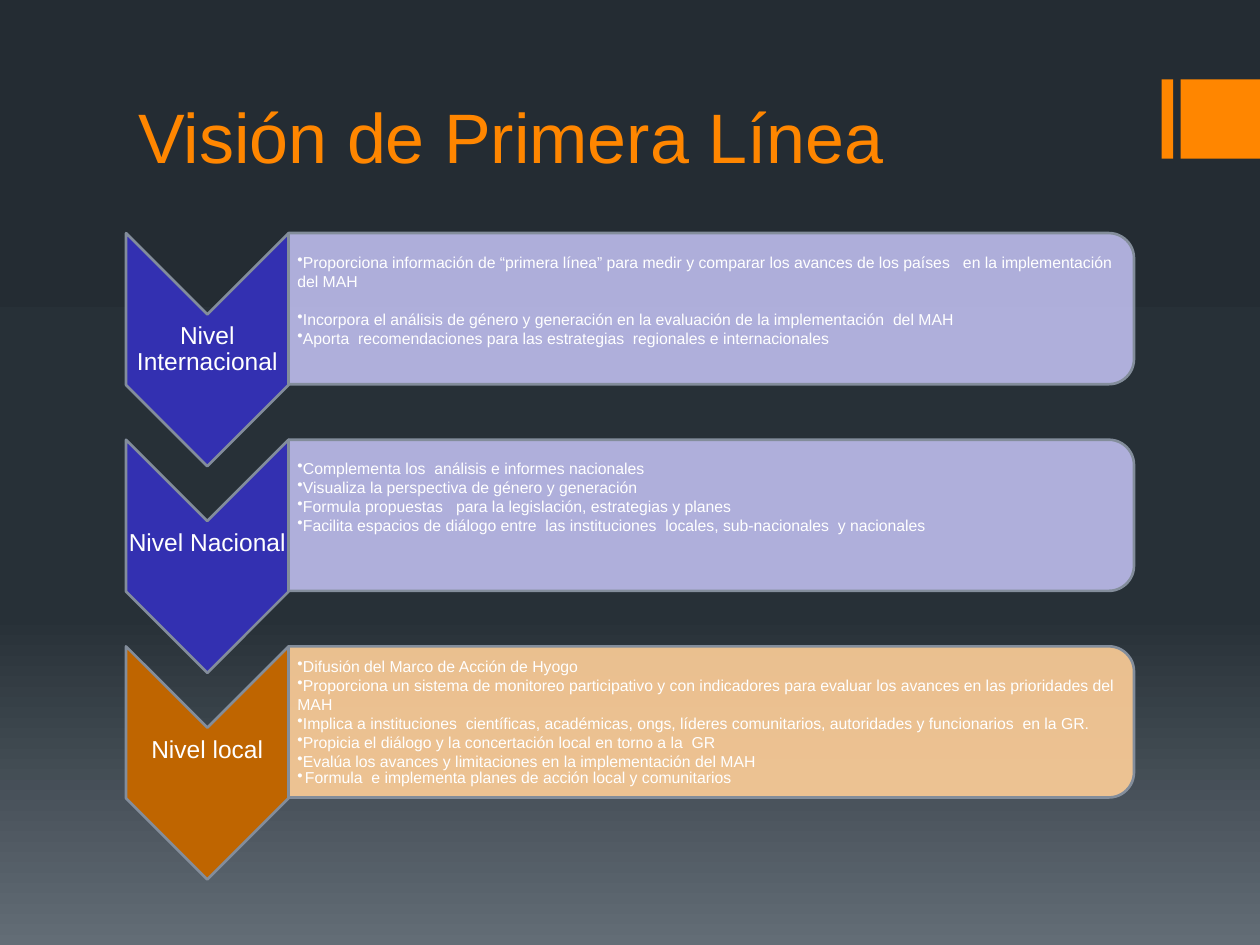
from copy import deepcopy

from lxml import etree
from pptx import Presentation
from pptx.dml.color import RGBColor
from pptx.enum.shapes import MSO_SHAPE
from pptx.enum.text import MSO_ANCHOR, PP_ALIGN
from pptx.oxml.ns import qn
from pptx.util import Inches, Pt

RECTANGLE = MSO_SHAPE.RECTANGLE
CHEVRON = MSO_SHAPE.CHEVRON
ROUNDED_TOP = MSO_SHAPE.ROUND_2_SAME_RECTANGLE
MIDDLE, BOTTOM = MSO_ANCHOR.MIDDLE, MSO_ANCHOR.BOTTOM
LEFT, CENTER = PP_ALIGN.LEFT, PP_ALIGN.CENTER

ORANGE, WHITE, OUTLINE = "FF8600", "FFFFFF", "838D9B"
BACKGROUND_STOPS = [(0, "242C33"), (0.65, "273037"), (1, "636D76")]
FIRST_TOP, ROW_PITCH = 1.85, 1.64
CHEVRON_WIDTH, CHEVRON_HEIGHT = 1.29, 1.85
PANEL_LEFT, PANEL_WIDTH, PANEL_HEIGHT = 2.29, 6.71, 1.2

LEVELS = [
    dict(
        label="Nivel Internacional", dark="3330B1", light="BEBDED",
        label_bottom=0.01, panel_bottom=0.15, gap_after_first=10.8,
        bullets=[
            "Proporciona información de “primera línea” para medir y comparar los avances de los países   en la implementación del MAH",
            "Incorpora el análisis de género y generación en la evaluación de la implementación  del MAH",
            "Aporta  recomendaciones para las estrategias  regionales e internacionales",
        ],
    ),
    dict(
        label="Nivel Nacional", dark="3330B1", light="BEBDED",
        label_bottom=0.21, panel_bottom=0.31,
        bullets=[
            "Complementa los  análisis e informes nacionales",
            "Visualiza la perspectiva de género y generación",
            "Formula propuestas   para la legislación, estrategias y planes",
            "Facilita espacios de diálogo entre  las instituciones  locales, sub-nacionales  y nacionales",
        ],
    ),
    dict(
        label="Nivel local", dark="BF6500", light="FFCF99",
        label_bottom=0.21, panel_bottom=0.01, last_hanging=0.06,
        bullets=[
            "Difusión del Marco de Acción de Hyogo",
            "Proporciona un sistema de monitoreo participativo y con indicadores para evaluar los avances en las prioridades del MAH",
            "Implica a instituciones  científicas, académicas, ongs, líderes comunitarios, autoridades y funcionarios  en la GR.",
            "Propicia el diálogo y la concertación local en torno a la  GR",
            "Evalúa los avances y limitaciones en la implementación del MAH",
            "Formula  e implementa planes de acción local y comunitarios",
        ],
    ),
]


def color(value):
    """Turn a hex string into a colour."""
    return RGBColor.from_string(value)


def set_background(slide):
    """Fill the slide with a gradient running from top to bottom."""
    fill = slide.background.fill
    fill.gradient()
    fill.gradient_angle = 270
    stop_list = slide.element.find(".//" + qn("a:gsLst"))
    stop_list.append(deepcopy(stop_list[-1]))
    for stop, (position, value) in zip(fill.gradient_stops, BACKGROUND_STOPS):
        stop.position = position
        stop.color.rgb = color(value)


def add_box(slide, kind, left, top, width, height, fill, outline=None, opacity=None):
    """Add a filled preset shape."""
    shape = slide.shapes.add_shape(
        kind, Inches(left), Inches(top), Inches(width), Inches(height))
    shape.shadow.inherit = False
    shape.fill.solid()
    shape.fill.fore_color.rgb = color(fill)
    if opacity:
        value = shape.element.spPr.find(qn("a:solidFill"))[0]
        etree.SubElement(value, qn("a:alpha")).set("val", str(opacity * 1000))
    if outline:
        shape.line.color.rgb = color(outline)
        shape.line.width = Pt(1.5)
    else:
        shape.line.fill.background()
    return shape


def add_turned_box(slide, kind, left, top, width, height, **style):
    """Add a shape turned a quarter clockwise that covers the given area."""
    shift = (width - height) / 2
    shape = add_box(slide, kind, left + shift, top - shift, height, width, **style)
    shape.rotation = 90
    return shape


def set_bullet(paragraph, hanging):
    """Give a paragraph a round bullet and a hanging indent."""
    properties = paragraph._p.get_or_add_pPr()
    properties.set("marL", str(Inches(hanging)))
    properties.set("indent", str(-Inches(hanging)))
    etree.SubElement(properties, qn("a:buChar")).set("char", "•")


def add_text(slide, text, left, top, width, height, *, size, fill=WHITE, align=LEFT,
             anchor=MIDDLE, insets=(0.1, 0.05, 0.1, 0.05), spacing=None, bulleted=False,
             gap_after_first=0, last_hanging=0):
    """Add a text box with one paragraph for each line of text."""
    box = slide.shapes.add_textbox(Inches(left), Inches(top), Inches(width), Inches(height))
    frame = box.text_frame
    frame.word_wrap = True
    frame.vertical_anchor = anchor
    (frame.margin_left, frame.margin_top,
     frame.margin_right, frame.margin_bottom) = map(Inches, insets)
    frame.text = text
    for paragraph in frame.paragraphs:
        paragraph.alignment = align
        if spacing:
            paragraph.line_spacing = spacing
        font = paragraph.runs[0].font
        font.name = "Arial"
        font.size = Pt(size)
        font.color.rgb = color(fill)
    if gap_after_first:
        frame.paragraphs[0].space_after = Pt(gap_after_first)
    if last_hanging:
        frame.paragraphs[-1].line_spacing = 0.9
    if bulleted:
        for paragraph in frame.paragraphs[:-1]:
            set_bullet(paragraph, 0)
        set_bullet(frame.paragraphs[-1], last_hanging)


def add_level(slide, top, label, dark, light, bullets, label_bottom, panel_bottom, **format):
    """Add one level: a chevron with its label and a panel of bullets."""
    add_turned_box(slide, CHEVRON, 1, top, CHEVRON_WIDTH, CHEVRON_HEIGHT,
                   fill=dark, outline=OUTLINE)
    add_text(slide, label, 1, top + 0.65, CHEVRON_WIDTH, 0.55, size=14, align=CENTER,
             insets=(0.01, 0.01, 0.01, label_bottom), spacing=0.9)
    add_turned_box(slide, ROUNDED_TOP, PANEL_LEFT, top, PANEL_WIDTH, PANEL_HEIGHT,
                   fill=light, outline=OUTLINE, opacity=90)
    add_text(slide, "\n".join(bullets), PANEL_LEFT, top + 0.06, 6.65, 1.08, size=9,
             insets=(0.07, 0.01, 0.01, panel_bottom), bulleted=True, **format)


def main():
    """Build and save the slide."""
    presentation = Presentation()
    presentation.slide_width, presentation.slide_height = Inches(10), Inches(7.5)
    slide = presentation.slides.add_slide(presentation.slide_layouts[6])
    set_background(slide)
    for left, width in ((9.22, 0.09), (9.37, 0.63)):
        add_box(slide, RECTANGLE, left, 0.63, width, 0.63, fill=ORANGE)
    add_text(slide, "Visión de Primera Línea", 1, 0.2, 8, 1.26,
             size=40, fill=ORANGE, anchor=BOTTOM)
    for row, level in enumerate(LEVELS):
        add_level(slide, FIRST_TOP + row * ROW_PITCH, **level)
    presentation.save("out.pptx")


if __name__ == "__main__":
    main()
